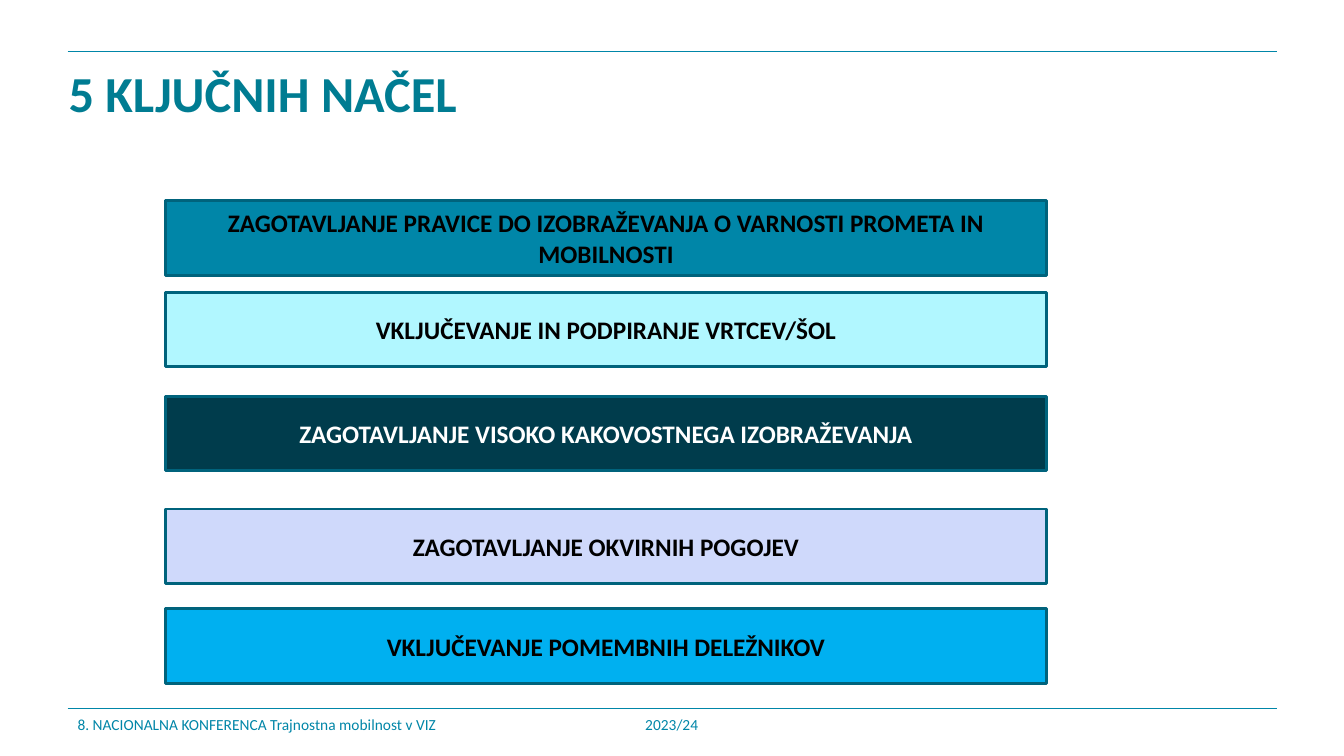
from dataclasses import dataclass

from lxml import etree
from pptx import Presentation
from pptx import util as u
from pptx.dml.color import RGBColor
from pptx.enum import shapes, text
from pptx.oxml import ns

WIDTH, HEIGHT = u.Inches(13.33), u.Inches(7.5)
TEAL, EDGE, FONT = "0086A8", "00637C", "Calibri"
BAR_LEFT, BAR_WIDTH, BAR_HEIGHT = 12.3, 65.57, 9.87
RULE_LEFT, RULE_RIGHT = 5.03, 95.05
YEAR_TAB = 42.24


@dataclass(frozen=True)
class Principle:
    """One key principle, its top edge in percent of the slide height."""

    wording: str
    top: float
    fill: str
    ink: str = "000000"


PRINCIPLES = (
    Principle("ZAGOTAVLJANJE PRAVICE DO IZOBRAŽEVANJA O VARNOSTI PROMETA IN MOBILNOSTI", 26.53, TEAL),
    Principle("VKLJUČEVANJE IN PODPIRANJE VRTCEV/ŠOL", 38.67, "B1F7FF"),
    Principle("ZAGOTAVLJANJE VISOKO KAKOVOSTNEGA IZOBRAŽEVANJA", 52.4, "003C4C", "FFFFFF"),
    Principle("ZAGOTAVLJANJE OKVIRNIH POGOJEV", 67.33, "CFD9FB"),
    Principle("VKLJUČEVANJE POMEMBNIH DELEŽNIKOV", 80.53, "00B0F0"),
)


def across(percent: float) -> int:
    """Turn a share of the slide width into a length."""
    return round(WIDTH * percent / 100)


def down(percent: float) -> int:
    """Turn a share of the slide height into a length."""
    return round(HEIGHT * percent / 100)


def paint(target, colour: str) -> None:
    """Give a fill a solid colour."""
    target.solid()
    target.fore_color.rgb = RGBColor.from_string(colour)


def write(paragraph, wording: str, size: float, colour: str, bold: bool = False) -> None:
    """Add one formatted run to a paragraph."""
    run = paragraph.add_run()
    run.text = wording
    run.font.name, run.font.size, run.font.bold = FONT, u.Pt(size), bold
    paint(run.font.fill, colour)


def draw_rule(slide, height: float) -> None:
    """Draw a horizontal rule across the slide."""
    rule = slide.shapes.add_connector(
        shapes.MSO_CONNECTOR.STRAIGHT,
        across(RULE_LEFT), down(height), across(RULE_RIGHT), down(height))
    paint(rule.line.fill, TEAL)
    rule.line.width = u.Pt(1)
    etree.SubElement(rule._element.spPr, ns.qn("a:effectLst"))


def draw_title(slide) -> None:
    """Place and fill the title placeholder."""
    title = slide.shapes.title
    title.left, title.top = across(4.35), down(7.6)
    title.width, title.height = across(90.02), down(16.67)
    title.text_frame.vertical_anchor = text.MSO_ANCHOR.TOP
    heading = title.text_frame.paragraphs[0]
    heading.alignment = text.PP_ALIGN.LEFT
    write(heading, "5 KLJUČNIH NAČEL", 36, "007C92", True)


def draw_principle(slide, principle: Principle) -> None:
    """Draw a principle as a bar with centred wording."""
    bar = slide.shapes.add_shape(
        shapes.MSO_SHAPE.RECTANGLE, across(BAR_LEFT), down(principle.top),
        across(BAR_WIDTH), down(BAR_HEIGHT))
    bar.shadow.inherit = False
    paint(bar.fill, principle.fill)
    paint(bar.line.fill, EDGE)
    bar.line.width = u.Pt(2)
    bar.text_frame.word_wrap = True
    bar.text_frame.vertical_anchor = text.MSO_ANCHOR.MIDDLE
    label = bar.text_frame.paragraphs[0]
    label.alignment = text.PP_ALIGN.CENTER
    write(label, principle.wording, 18, principle.ink, True)


def draw_footer(slide) -> None:
    """Write the conference name and, at a tab stop, the school year."""
    footer = slide.shapes.add_textbox(across(RULE_LEFT), down(94), across(60.84), down(5.33))
    footer.text_frame.word_wrap = True
    line = footer.text_frame.paragraphs[0]
    tabs = etree.SubElement(line._p.get_or_add_pPr(), ns.qn("a:tabLst"))
    etree.SubElement(tabs, ns.qn("a:tab"), pos=str(across(YEAR_TAB)), algn="l")
    for wording in ("8. NACIONALNA KONFERENCA Trajnostna mobilnost v VIZ", "\t2023/24"):
        write(line, wording, 11, TEAL)


def main() -> None:
    """Build and save the slide."""
    deck = Presentation()
    deck.slide_width, deck.slide_height = WIDTH, HEIGHT
    slide = deck.slides.add_slide(deck.slide_layouts[5])
    for height in (93.73, 6.8):
        draw_rule(slide, height)
    draw_title(slide)
    for principle in PRINCIPLES:
        draw_principle(slide, principle)
    draw_footer(slide)
    deck.save("out.pptx")


if __name__ == "__main__":
    main()
